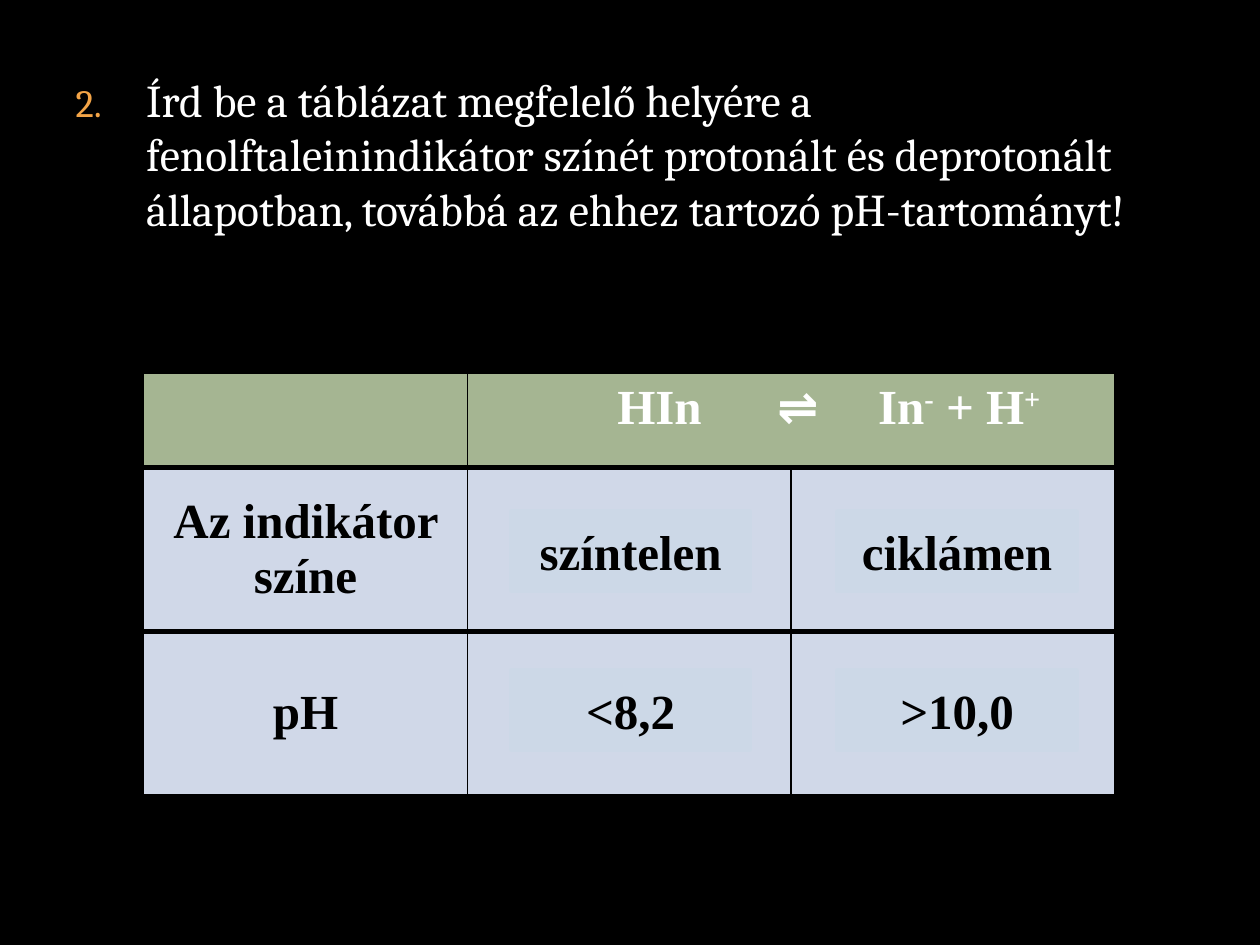
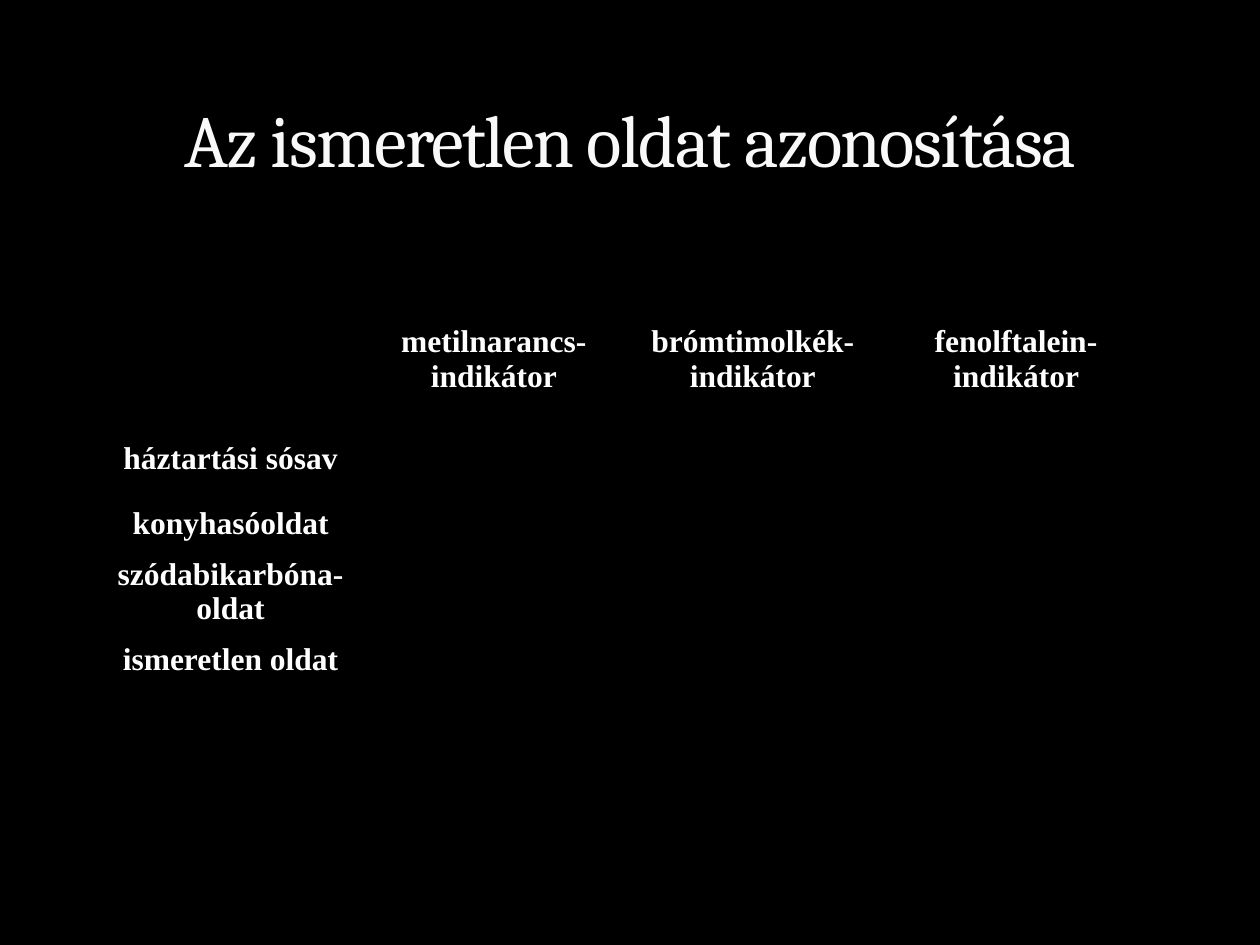
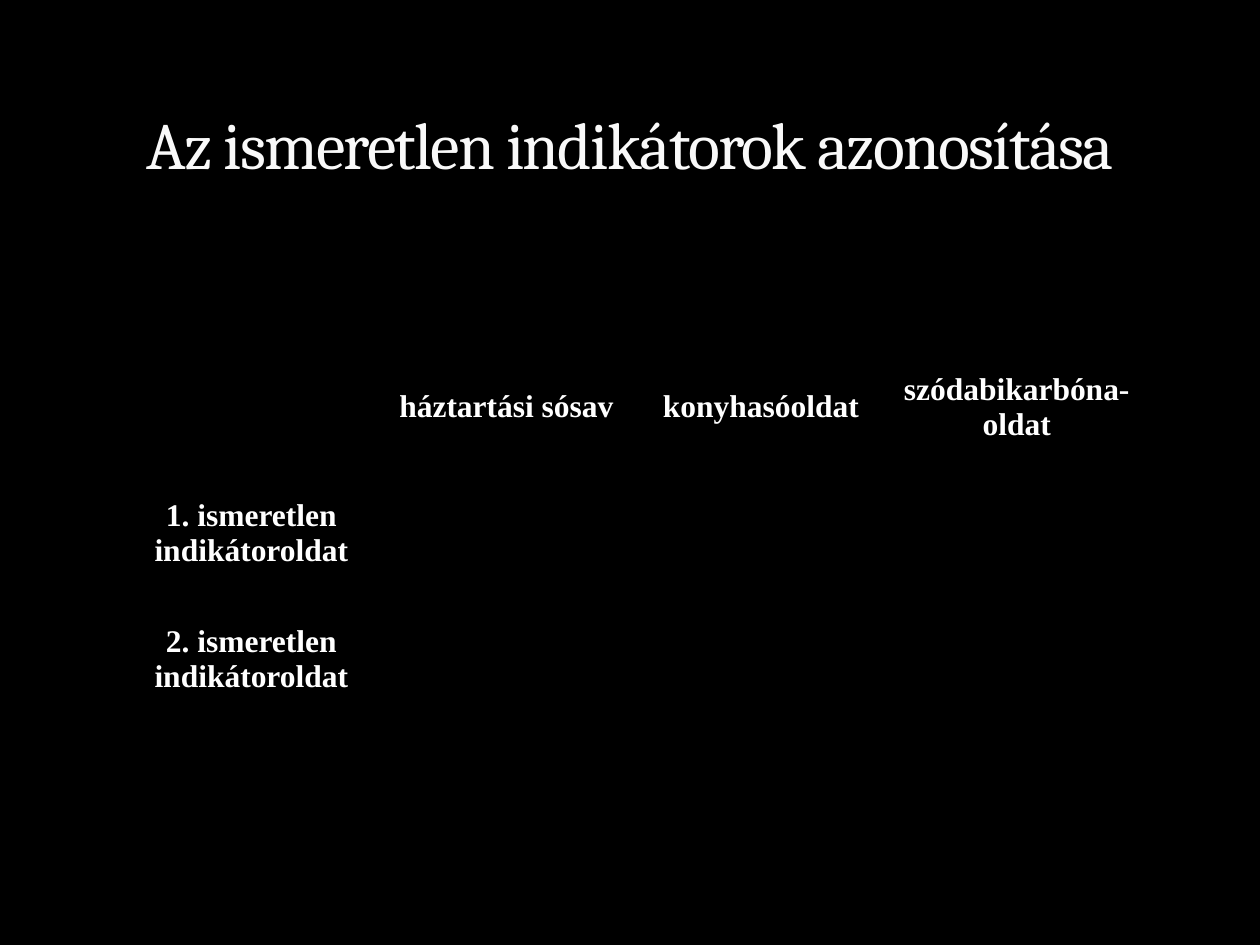
from lxml.etree import SubElement
from pptx import Presentation
from pptx.dml.color import RGBColor
from pptx.enum.shapes import MSO_SHAPE as Preset
from pptx.enum.text import MSO_ANCHOR as Anchor, MSO_AUTO_SIZE as AutoSize, PP_ALIGN as Align
from pptx.oxml.ns import qn
from pptx.util import Inches, Pt

COLORS = {
    "background": "000000",
    "text": "FFFFFF",
    "title": "F9F9F9",
    "number": "F3A447",
    "border": "000000",
    "table_head": "A5B592",
    "table_body": "D0D8E8",
    "answer": "CCD8E7",
    "dark_text": "000000",
}
BODY_FONT, TABLE_FONT = "Cambria", "Times New Roman"
SLIDE_SIZE = (Inches(10), Inches(7.5))
GRID_COLUMNS = 100  # square grid: 100 columns by 75 rows
UNIT = SLIDE_SIZE[0] / GRID_COLUMNS
TITLE_BOX = (5, 1.7, 90, 13.3)


def grid(*steps):
    return [round(step * UNIT) for step in steps]


def color(name):
    return RGBColor.from_string(COLORS[name])


def add_run(paragraph, text, size, tone, font=TABLE_FONT, bold=True, raised=False):
    run = paragraph.add_run()
    run.text = text
    run.font.name, run.font.size, run.font.bold = font, Pt(size), bold
    run.font.color.rgb = color(tone)
    if raised:
        run.font._element.set("baseline", "30000")
    return run


def move(shape, box):
    shape.left, shape.top, shape.width, shape.height = grid(*box)


# Placeholders
def add_title(slide, text, size):
    title = slide.shapes.title
    move(title, TITLE_BOX)
    frame = title.text_frame
    frame.auto_size, frame.vertical_anchor = AutoSize.NONE, Anchor.BOTTOM
    paragraph = frame.paragraphs[0]
    paragraph.alignment = Align.CENTER
    run = add_run(paragraph, text, size, "title", BODY_FONT, False)
    run.font._element.set("spc", "-100")


def add_numbered_task(slide, box, number, text):
    body = slide.placeholders[1]
    move(body, box)
    frame = body.text_frame
    frame.auto_size, frame.vertical_anchor = AutoSize.NONE, Anchor.TOP
    paragraph = frame.paragraphs[0]
    paragraph.space_before = Pt(0)
    properties = paragraph._p.get_or_add_pPr()
    indent = Inches(0.56)
    properties.set("marL", str(indent))
    properties.set("indent", str(-indent))
    bullet_color = SubElement(properties, qn("a:buClr"))
    SubElement(bullet_color, qn("a:srgbClr"), val=COLORS["number"])
    SubElement(properties, qn("a:buSzPct"), val="85000")
    SubElement(properties, qn("a:buAutoNum"), type="arabicPeriod", startAt=str(number))
    add_run(paragraph, text, 26, "text", BODY_FONT, False)


# Tables
def set_borders(cell, vertical, top, bottom):
    properties = cell._tc.get_or_add_tcPr()
    widths = {"a:lnL": vertical, "a:lnR": vertical, "a:lnT": top, "a:lnB": bottom}
    for position, (tag, width) in enumerate(widths.items()):
        line = SubElement(properties, qn(tag), w=str(Pt(width)))
        fill = SubElement(line, qn("a:solidFill"))
        SubElement(fill, qn("a:srgbClr"), val=COLORS["border"])
        properties.insert(position, line)


def add_grid_table(slide, corner, columns, rows):
    box = grid(*corner, sum(columns), sum(rows))
    table = slide.shapes.add_table(len(rows), len(columns), *box).table
    table.first_row = table.horz_banding = False
    for column, width in zip(table.columns, grid(*columns)):
        column.width = width
    for row, height in zip(table.rows, grid(*rows)):
        row.height = height
    return table


def write_cell(cell, text, size, tone):
    cell.vertical_anchor = Anchor.MIDDLE
    paragraph = cell.text_frame.paragraphs[0]
    paragraph.alignment = Align.CENTER
    add_run(paragraph, text, size, tone)


def add_observation_table(slide, corner, columns, rows, column_heads, row_heads):
    """Blank results table with headings along the top and the left."""
    table = add_grid_table(slide, corner, columns, rows)
    for cell in table.iter_cells():
        cell.fill.background()
        set_borders(cell, 1, 1, 1)
        cell.margin_left = cell.margin_right = Inches(0.07)
        cell.margin_top = cell.margin_bottom = 0
    for column, text in enumerate(column_heads, 1):
        write_cell(table.cell(0, column), text, 18, "text")
    for row, text in enumerate(row_heads, 1):
        write_cell(table.cell(row, 0), text, 18, "text")


def write_equilibrium(cell):
    cell.margin_left = Inches(1.19)
    paragraph = cell.text_frame.paragraphs[0]
    paragraph.alignment = Align.LEFT
    stops = SubElement(paragraph._p.get_or_add_pPr(), qn("a:tabLst"))
    for position in (1.27, 2.07):
        SubElement(stops, qn("a:tab"), pos=str(Inches(position)), algn="l")
    add_run(paragraph, "HIn\t", 28, "text")
    add_run(paragraph, "⇌", 28, "text", "Roboto")
    add_run(paragraph, "\tIn", 28, "text")
    add_run(paragraph, "-", 28, "text", raised=True)
    add_run(paragraph, " + H", 28, "text")
    add_run(paragraph, "+", 28, "text", raised=True)


def add_indicator_table(slide):
    table = add_grid_table(slide, (11.4, 29.6), [25.7] * 3, [7.5, 13, 13])
    last = len(table.rows) - 1
    for row in range(last + 1):
        for column in range(len(table.columns)):
            cell = table.cell(row, column)
            cell.fill.solid()
            cell.fill.fore_color.rgb = color("table_body" if row else "table_head")
            set_borders(cell, 1, 3 if row else 1, 1 if row == last else 3)
    table.cell(0, 1).merge(table.cell(0, 2))
    write_equilibrium(table.cell(0, 1))
    for row, text in enumerate(["Az indikátor színe", "pH"], 1):
        write_cell(table.cell(row, 0), text, 28, "dark_text")


def add_answer(slide, box, text):
    answer = slide.shapes.add_shape(Preset.RECTANGLE, *grid(*box))
    answer.shadow.inherit = False
    answer.fill.solid()
    answer.fill.fore_color.rgb = answer.line.color.rgb = color("answer")
    answer.line.width = Pt(3)
    answer.text_frame.vertical_anchor = Anchor.MIDDLE
    paragraph = answer.text_frame.paragraphs[0]
    paragraph.alignment = Align.CENTER
    add_run(paragraph, text, 28, "dark_text")


# Slides
def build_indicator_slide(presentation):
    slide = presentation.slides.add_slide(presentation.slide_layouts[1])
    title = slide.shapes.title._element
    title.getparent().remove(title)
    add_numbered_task(
        slide, (5, 5.2, 90, 61.8), 2,
        "Írd be a táblázat megfelelő helyére a fenolftaleinindikátor színét protonált "
        "és deprotonált állapotban, továbbá az ehhez tartozó pH-tartományt!")
    add_indicator_table(slide)
    answers = [["színtelen", "ciklámen"], ["<8,2", ">10,0"]]
    for row, texts in enumerate(answers):
        for column, text in enumerate(texts):
            add_answer(slide, (40.6 + 25.9 * column, 40.6 + 12.6 * row, 18.9, 6.3), text)


def build_observation_slide(presentation, title, title_size, **table):
    slide = presentation.slides.add_slide(presentation.slide_layouts[5])
    add_title(slide, title, title_size)
    add_observation_table(slide, **table)


def main():
    presentation = Presentation()
    presentation.slide_width, presentation.slide_height = SLIDE_SIZE
    background = presentation.slide_master.background.fill
    background.solid()
    background.fore_color.rgb = color("background")

    build_indicator_slide(presentation)
    build_observation_slide(
        presentation, "Az ismeretlen oldat azonosítása", 42,
        corner=(7.5, 23.3), columns=[21.6, 20.2, 20.9, 20.9], rows=[10.5] + [5.2] * 4,
        column_heads=["metilnarancs-indikátor", "brómtimolkék- indikátor",
                      "fenolftalein-indikátor"],
        row_heads=["háztartási sósav", "konyhasóoldat", "szódabikarbóna-oldat",
                   "ismeretlen oldat"])
    build_observation_slide(
        presentation, "Az ismeretlen indikátorok azonosítása", 37.8,
        corner=(9.8, 27.3), columns=[20.3, 20.2, 20.2, 20.4], rows=[10] * 3,
        column_heads=["háztartási sósav", "konyhasóoldat", "szódabikarbóna-oldat"],
        row_heads=["1. ismeretlen indikátoroldat", "2. ismeretlen indikátoroldat"])
    presentation.save("out.pptx")


if __name__ == "__main__":
    main()
